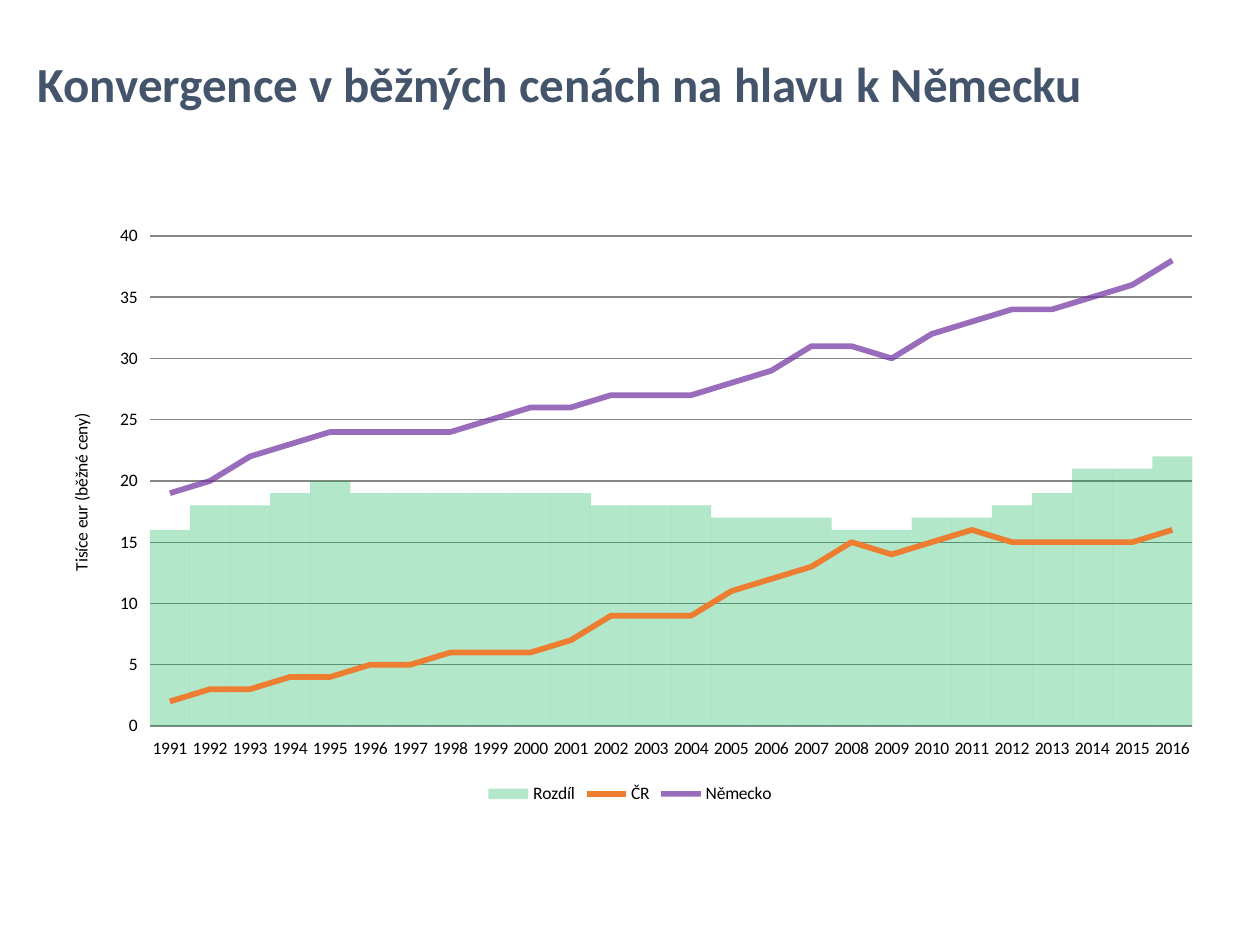
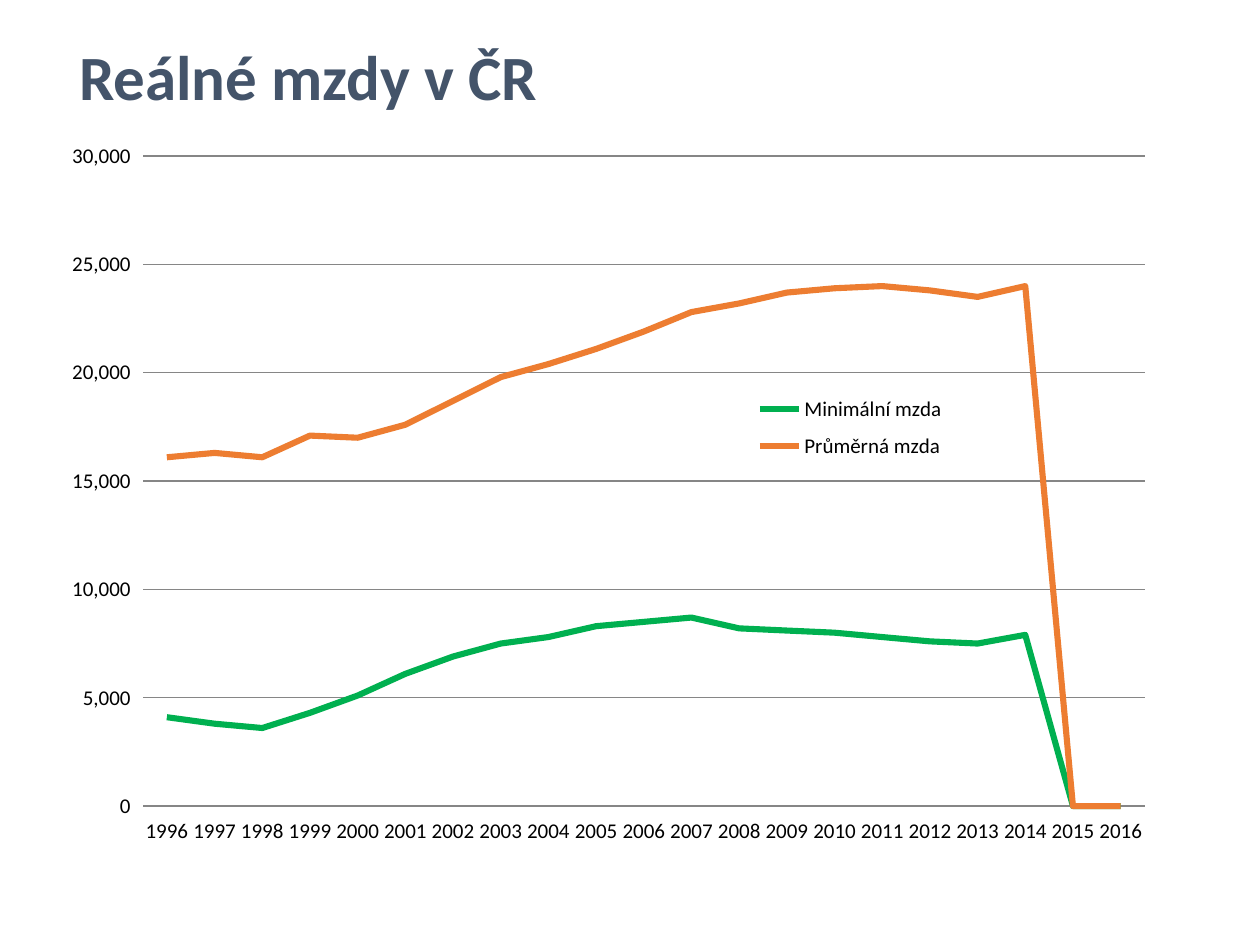
from dataclasses import dataclass

from lxml import etree
from pptx import Presentation
from pptx import util as u
from pptx.chart import data as chart_data
from pptx.dml.color import RGBColor
from pptx.enum import chart as charts, text
from pptx.oxml import ns, xmlchemy

Pt = u.Pt


@dataclass(frozen=True)
class Theme:
    font: str = "Calibri"
    title: str = "44546A"
    label: str = "000000"
    grid: str = "868686"
    green: str = "00B050"
    orange: str = "ED7D31"
    purple: str = "7030A0"
    long_title_size: float = 28
    title_size: float = 36
    small_label_size: float = 10
    label_size: float = 12


THEME = Theme()

# Chart data
GDP_YEARS = range(1991, 2017)
GDP = {
    "Rozdíl": [16, 18, 18, 19, 20, 19, 19, 19, 19, 19, 19, 18, 18, 18, 17, 17, 17,
               16, 16, 17, 17, 18, 19, 21, 21, 22],
    "ČR": [2, 3, 3, 4, 4, 5, 5, 6, 6, 6, 7, 9, 9, 9, 11, 12, 13,
           15, 14, 15, 16, 15, 15, 15, 15, 16],
    "Německo": [19, 20, 22, 23, 24, 24, 24, 24, 25, 26, 26, 27, 27, 27, 28, 29, 31,
                31, 30, 32, 33, 34, 34, 35, 36, 38],
}
WAGE_YEARS = range(1996, 2017)
WAGES = {
    "Minimální mzda": [4100, 3800, 3600, 4300, 5100, 6100, 6900, 7500, 7800, 8300, 8500,
                       8700, 8200, 8100, 8000, 7800, 7600, 7500, 7900, None, None],
    "Průměrná mzda": [16100, 16300, 16100, 17100, 17000, 17600, 18700, 19800, 20400,
                      21100, 21900, 22800, 23200, 23700, 23900, 24000, 23800, 23500,
                      24000, None, None],
}


# Small helpers
def rgb(color):
    return RGBColor.from_string(color)


def add_child(parent, tag, value=None):
    child = etree.SubElement(parent, ns.qn(tag))
    if value is not None:
        child.set("val", str(value))
    return child


def remove_children(parent, tag):
    for child in parent.findall(ns.qn(tag)):
        parent.remove(child)


def set_opacity(element, percent):
    color = next(element.iter(ns.qn("a:srgbClr")))
    add_child(color, "a:alpha", percent * 1000)


def style_font(font, size, color, bold=False):
    font.name = THEME.font
    font.size = Pt(size)
    font.bold = bold
    font.color.rgb = rgb(color)


# Slide title
def add_title(slide, words, box, size):
    frame = slide.shapes.add_textbox(*map(Pt, box)).text_frame
    frame.word_wrap = True
    frame.vertical_anchor = text.MSO_ANCHOR.MIDDLE
    paragraph = frame.paragraphs[0]
    paragraph.line_spacing = 0.9
    run = paragraph.add_run()
    run.text = words
    style_font(run.font, size, THEME.title, bold=True)


# Chart parts
def add_chart(slide, kind, box, years, series, size, legend_position):
    content = chart_data.CategoryChartData()
    content.categories = [str(year) for year in years]
    for name, values in series.items():
        content.add_series(name, values)
    chart = slide.shapes.add_chart(kind, *map(Pt, box), content).chart
    chart.has_title = False
    style_font(chart.font, size, THEME.label)
    chart.has_legend = True
    chart.legend.position = legend_position
    chart.legend.include_in_layout = False
    chart.plots[0].vary_by_categories = False
    return chart


def style_axes(chart, maximum, step, number_format):
    for axis in (chart.category_axis, chart.value_axis):
        axis.major_tick_mark = charts.XL_TICK_MARK.OUTSIDE
        axis.format.line.fill.background()
    values = chart.value_axis
    values.minimum_scale, values.maximum_scale, values.major_unit = 0, maximum, step
    values.tick_labels.number_format = number_format
    values.tick_labels.number_format_is_linked = False
    values.has_major_gridlines = True
    line = values.major_gridlines.format.line
    line.color.rgb = rgb(THEME.grid)
    line.width = Pt(0.75)


def add_axis_title(axis, words, size):
    frame = axis.axis_title.text_frame
    run = frame.paragraphs[0].add_run()
    run.text = words
    style_font(run.font, size, THEME.label)
    body = axis.axis_title._element.find(".//" + ns.qn("a:bodyPr"))
    body.set("rot", "-5400000")
    body.set("vert", "horz")


def style_line(series, color, width):
    series.smooth = False
    series.marker.style = charts.XL_MARKER_STYLE.NONE
    series.format.line.color.rgb = rgb(color)
    series.format.line.width = Pt(width)


def move_to_line_plot(chart, first):
    """Draw the column series from index first onwards as lines on the same axes."""
    bars = chart._chartSpace.find(".//" + ns.qn("c:barChart"))
    lines = xmlchemy.OxmlElement("c:lineChart")
    bars.addnext(lines)
    add_child(lines, "c:grouping", "standard")
    add_child(lines, "c:varyColors", 0)
    for series in bars.findall(ns.qn("c:ser"))[first:]:
        remove_children(series, "c:invertIfNegative")
        lines.append(series)
    add_child(lines, "c:marker", 1)
    for axis in bars.findall(ns.qn("c:axId")):
        add_child(lines, "c:axId", axis.get("val"))
    return chart.plots[1]


def place(element, x, y, width, height, inner=False):
    """Fix the plot area or legend at fractions of the chart."""
    remove_children(element, "c:layout")
    layout = xmlchemy.OxmlElement("c:layout")
    position = element.find(ns.qn("c:legendPos"))
    if position is None:
        element.insert(0, layout)
    else:
        position.addnext(layout)
    manual = add_child(layout, "c:manualLayout")
    if inner:
        add_child(manual, "c:layoutTarget", "inner")
    for tag, value in (("xMode", "edge"), ("yMode", "edge"),
                       ("x", x), ("y", y), ("w", width), ("h", height)):
        add_child(manual, "c:" + tag, value)


# Slides
def add_convergence_slide(slide):
    add_title(slide, "Konvergence v běžných cenách na hlavu k Německu",
              (14.4, 21.6, 697.7, 55.4), THEME.long_title_size)
    chart = add_chart(slide, charts.XL_CHART_TYPE.COLUMN_CLUSTERED,
                      (25.2, 122.4, 669.6, 339.8), GDP_YEARS, GDP,
                      THEME.small_label_size, charts.XL_LEGEND_POSITION.BOTTOM)
    style_axes(chart, 40, 5, "General")
    add_axis_title(chart.value_axis, "Tisíce eur (běžné ceny)", THEME.small_label_size)

    lines = move_to_line_plot(chart, 1)
    columns = chart.plots[0]
    columns.gap_width = 0
    gap = columns.series[0]
    gap.format.fill.solid()
    gap.format.fill.fore_color.rgb = rgb(THEME.green)
    gap.format.line.fill.background()
    set_opacity(gap._element, 30)

    czechia, germany = lines.series
    style_line(czechia, THEME.orange, 3.25)
    style_line(germany, THEME.purple, 3.25)
    set_opacity(germany._element, 70)


def add_wages_slide(slide):
    add_title(slide, "Reálné mzdy v ČR", (38.2, 0.7, 648, 90), THEME.title_size)
    chart = add_chart(slide, charts.XL_CHART_TYPE.LINE,
                      (38.2, 77, 622.1, 408.2), WAGE_YEARS, WAGES,
                      THEME.label_size, charts.XL_LEGEND_POSITION.RIGHT)
    style_axes(chart, 30000, 5000, "#,##0")
    for series, color in zip(chart.plots[0].series, (THEME.green, THEME.orange)):
        style_line(series, color, 3.5)

    # Years without data fall to zero
    chart._chartSpace.find(".//" + ns.qn("c:dispBlanksAs")).set("val", "zero")
    plot_area = chart._chartSpace.find(".//" + ns.qn("c:plotArea"))
    place(plot_area, 0.07, 0.03, 0.92, 0.91, inner=True)
    place(chart.legend._element, 0.61, 0.35, 0.22, 0.12)


def main():
    presentation = Presentation()
    presentation.slide_width, presentation.slide_height = Pt(720), Pt(540)
    blank = presentation.slide_layouts[6]
    for build in (add_convergence_slide, add_wages_slide):
        build(presentation.slides.add_slide(blank))
    presentation.save("out.pptx")


if __name__ == "__main__":
    main()
